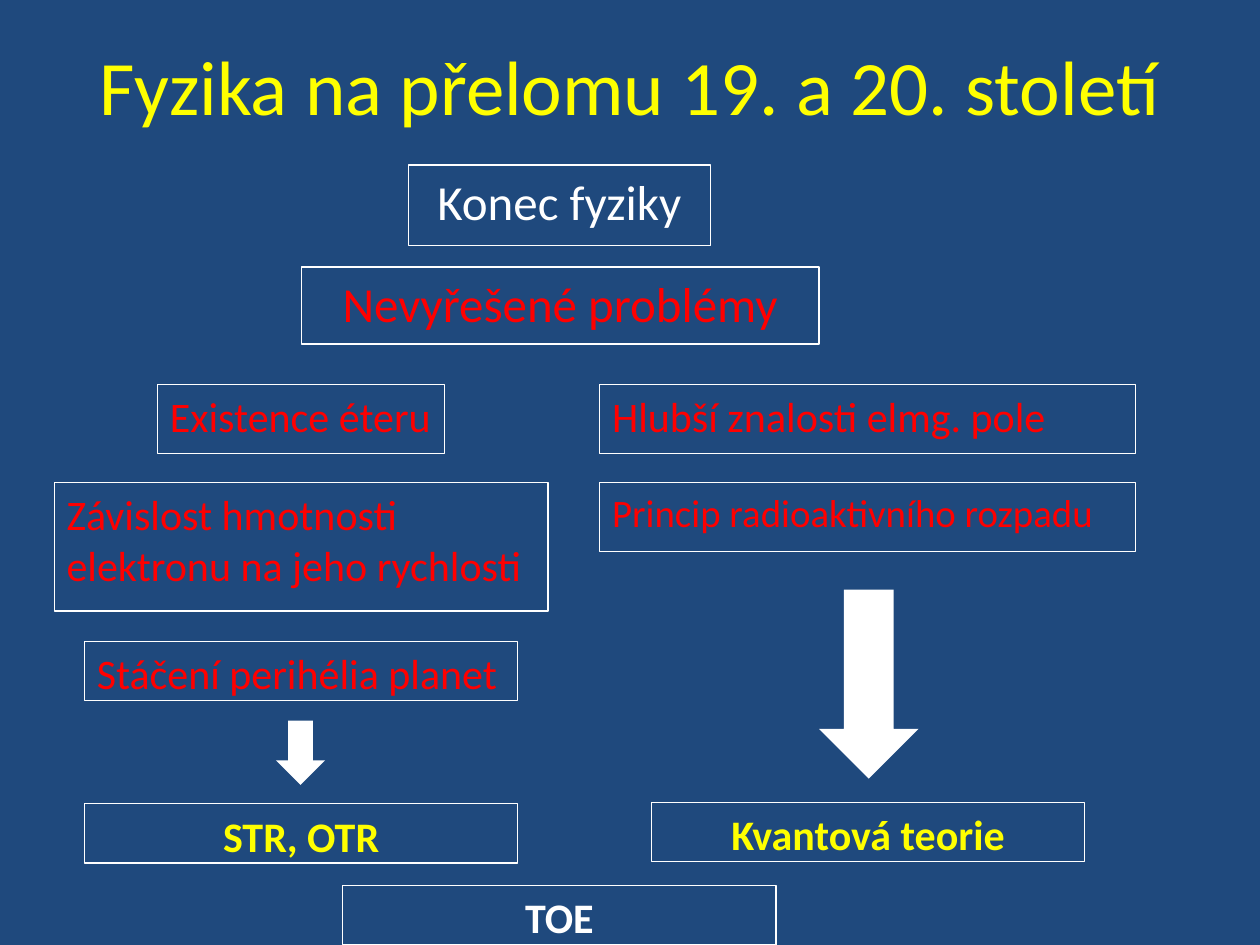
import pptx
import pptx.util
import pptx.dml.color
import pptx.enum.shapes
import pptx.enum.text
from dataclasses import dataclass

Inches = pptx.util.Inches
RGB = pptx.dml.color.RGBColor
ALIGN = pptx.enum.text.PP_ALIGN
ANCHOR = pptx.enum.text.MSO_ANCHOR
SHAPE = pptx.enum.shapes.MSO_SHAPE


@dataclass(frozen=True)
class Theme:
    font: str = "Calibri"
    background: RGB = RGB(0x1F, 0x49, 0x7D)
    white: RGB = RGB(0xFF, 0xFF, 0xFF)
    yellow: RGB = RGB(0xFF, 0xFF, 0x00)
    red: RGB = RGB(0xFF, 0x00, 0x00)
    title: float = 44
    heading: float = 28
    body: float = 24
    fitted: float = 22.2
    line: float = 0.75


class Builder:
    def __init__(self, slide, theme):
        self.s = slide
        self.theme = theme
        fill = slide.background.fill
        fill.solid()
        fill.fore_color.rgb = theme.background

    def set_text(self, sp, text, size, color, align, anchor, bold=False):
        tf = sp.text_frame
        tf.text = text
        tf.word_wrap = True
        tf.vertical_anchor = anchor
        p = tf.paragraphs[0]
        p.alignment = align
        font = p.runs[0].font
        font.name = self.theme.font
        font.size = pptx.util.Pt(size)
        font.bold = bold
        font.color.rgb = color

    def title(self, text, x, y, w, h):
        sp = self.s.shapes.add_textbox(Inches(x), Inches(y), Inches(w), Inches(h))
        self.set_text(sp, text, self.theme.title, self.theme.yellow,
                      ALIGN.CENTER, ANCHOR.MIDDLE)

    def shape(self, kind, x, y, w, h):
        sp = self.s.shapes.add_shape(kind, Inches(x), Inches(y), Inches(w), Inches(h))
        sp.shadow.inherit = False
        return sp

    def box(self, text, x, y, w, h, size, color, align=ALIGN.CENTER, bold=False):
        sp = self.shape(SHAPE.RECTANGLE, x, y, w, h)
        sp.fill.background()
        sp.line.color.rgb = self.theme.white
        sp.line.width = pptx.util.Pt(self.theme.line)
        self.set_text(sp, text, size, color, align, ANCHOR.TOP, bold)

    def down_arrow(self, x, y, w, h):
        sp = self.shape(SHAPE.DOWN_ARROW, x, y, w, h)
        sp.fill.solid()
        sp.fill.fore_color.rgb = self.theme.white
        sp.line.fill.background()


def main():
    prs = pptx.Presentation()
    prs.slide_width, prs.slide_height = Inches(10), Inches(7.5)
    theme = Theme()
    b = Builder(prs.slides.add_slide(prs.slide_layouts[6]), theme)

    # Title and headings
    b.title("Fyzika na přelomu 19. a 20. století", 0.5, 0.05, 9, 1.25)
    b.box("Konec fyziky", 3.24, 1.31, 2.4, 0.64, theme.heading, theme.white)
    b.box("Nevyřešené problémy", 2.39, 2.12, 4.11, 0.61, theme.heading, theme.red)

    # Unsolved problems: relativity on the left, quantum physics on the right
    row1, row2, row_h = 3.05, 3.83, 0.55
    right, right_w = 4.76, 4.25
    result_w, result_h = 3.44, 0.47
    left = 0.67
    problems = [
        ("Existence éteru", 1.25, row1, 2.28, row_h, theme.body),
        ("Závislost hmotnosti elektronu na jeho rychlosti",
         0.43, row2, 3.92, 1.02, theme.body),
        ("Stáčení perihélia planet", left, 5.09, result_w, result_h, theme.body),
        ("Hlubší znalosti elmg. pole", right, row1, right_w, row_h, theme.body),
        ("Princip radioaktivního rozpadu", right, row2, right_w, row_h, theme.fitted),
    ]
    for text, x, y, w, h, size in problems:
        b.box(text, x, y, w, h, size, theme.red, ALIGN.LEFT)

    # Arrows to the resulting theories
    b.down_arrow(6.5, 4.68, 0.79, 1.5)
    b.down_arrow(2.19, 5.72, 0.39, 0.51)

    # Resulting theories
    results = [
        ("STR, OTR", left, 6.38, theme.yellow),
        ("Kvantová teorie", 5.17, 6.37, theme.yellow),
        ("TOE", 2.72, 7.03, theme.white),
    ]
    for text, x, y, color in results:
        b.box(text, x, y, result_w, result_h, theme.body, color, bold=True)

    prs.save("out.pptx")


if __name__ == "__main__":
    main()
